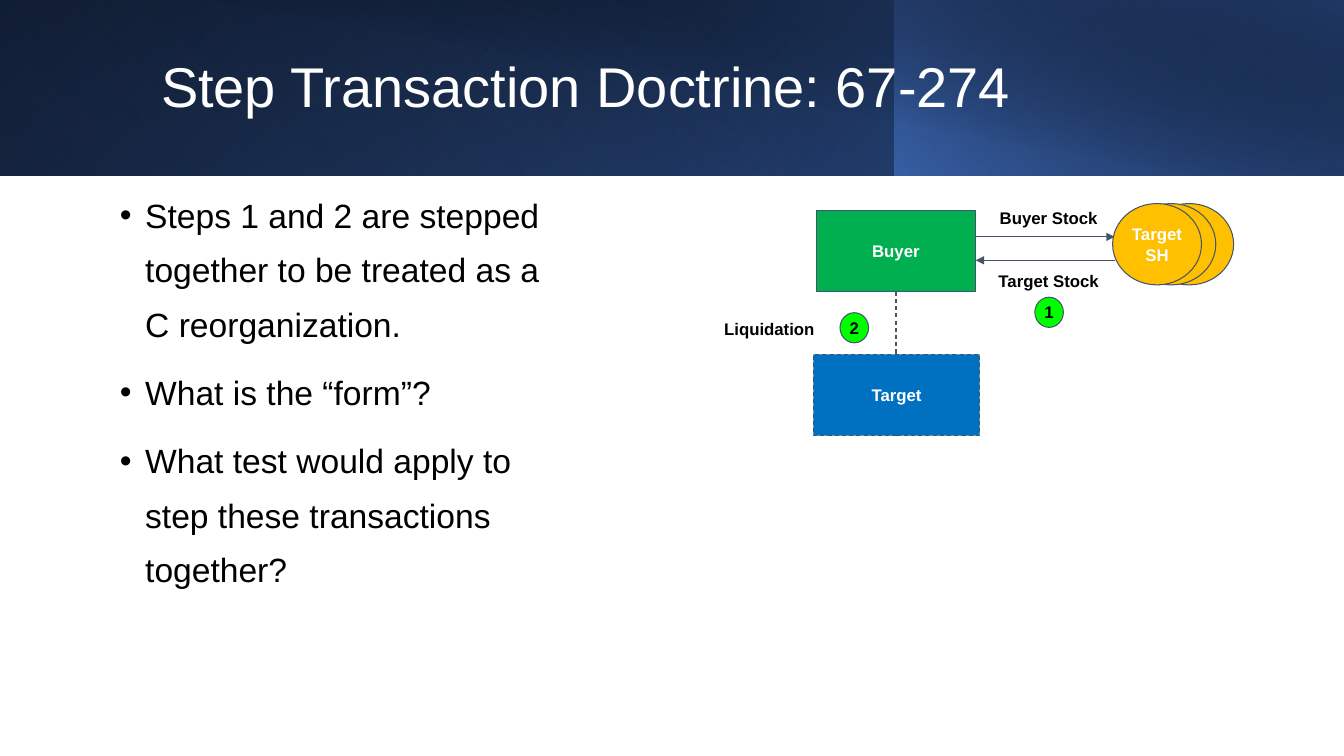
from dataclasses import dataclass

from lxml import etree
from pptx import Presentation
from pptx.dml.color import RGBColor
from pptx.enum.dml import MSO_LINE
from pptx.enum.shapes import MSO_CONNECTOR, MSO_SHAPE
from pptx.enum.text import MSO_ANCHOR, PP_ALIGN
from pptx.oxml import parse_xml
from pptx.oxml.ns import qn
from pptx.util import Cm, Pt

RECTANGLE = MSO_SHAPE.RECTANGLE
OVAL = MSO_SHAPE.OVAL
NODE = MSO_SHAPE.FLOWCHART_CONNECTOR
STRAIGHT = MSO_CONNECTOR.STRAIGHT
DASH = MSO_LINE.DASH
MIDDLE, TOP = MSO_ANCHOR.MIDDLE, MSO_ANCHOR.TOP
CENTER, LEFT = PP_ALIGN.CENTER, PP_ALIGN.LEFT
DRAWING = "http://schemas.openxmlformats.org/drawingml/2006/main"


@dataclass(frozen=True)
class Theme:
    font: str = "Arial"
    title_size: int = 40
    body_size: int = 24
    label_size: int = 12
    line_width: float = 0.75
    white: str = "FFFFFF"
    black: str = "000000"
    line: str = "44546A"
    buyer: str = "00B050"
    target: str = "0070C0"
    step: str = "00FF00"
    holder: str = "FFC000"
    royal: str = "2F5597"
    blue: str = "4472C4"
    navy: str = "203864"


@dataclass(frozen=True)
class Box:
    left: float
    top: float
    width: float
    height: float

    def inner(self, left, top, width, height):
        return Box(self.left + left, self.top + top, width, height)

    def lengths(self):
        return [Cm(value) for value in (self.left, self.top, self.width, self.height)]


THEME = Theme()


def set_all(target, values):
    for name, value in values.items():
        setattr(target, name, value)


def write(shape, lines, size, color, bold=False, align=CENTER, anchor=MIDDLE,
          margins=(0.25, 0.25), wrap=True, spacing=None):
    frame = shape.text_frame
    side, end = (Cm(margin) for margin in margins)
    set_all(frame, {"word_wrap": wrap, "vertical_anchor": anchor,
                    "margin_left": side, "margin_right": side,
                    "margin_top": end, "margin_bottom": end})
    for index, line in enumerate(lines):
        para = frame.add_paragraph() if index else frame.paragraphs[0]
        set_all(para, {"alignment": align, "line_spacing": spacing})
        span = para.add_run()
        span.text = line
        set_all(span.font, {"name": THEME.font, "size": Pt(size), "bold": bold})
        span.font.color.rgb = RGBColor.from_string(color)
    return frame


def add_gradient(page, box, stops, angle, flipped=False, rotation=0):
    shape = page.shapes.add_shape(RECTANGLE, *box.lengths())
    shape.shadow.inherit = False
    shape.line.fill.background()
    shape.rotation = rotation
    properties = shape._element.spPr
    if flipped:
        properties.find(qn("a:xfrm")).set("flipH", "1")
    marks = "".join(
        f'<a:gs pos="{place * 1000}"><a:srgbClr val="{color}">'
        f'<a:alpha val="{opacity * 1000}"/></a:srgbClr></a:gs>'
        for place, color, opacity in stops)
    properties.find(qn("a:prstGeom")).addnext(parse_xml(
        f'<a:gradFill xmlns:a="{DRAWING}" rotWithShape="1"><a:gsLst>{marks}</a:gsLst>'
        f'<a:lin ang="{angle * 60000}" scaled="0"/></a:gradFill>'))


def add_node(page, kind, box, fill, lines=(), color=THEME.white, dash=None, **text):
    shape = page.shapes.add_shape(kind, *box.lengths())
    shape.shadow.inherit = False
    shape.fill.solid()
    shape.fill.fore_color.rgb = RGBColor.from_string(fill)
    style_line(shape.line, dash)
    write(shape, lines, THEME.label_size, color, bold=True, **text)


def style_line(line, dash=None):
    line.color.rgb = RGBColor.from_string(THEME.line)
    set_all(line, {"width": Pt(THEME.line_width), "dash_style": dash})


def connect(page, box, start, finish, arrow=True, dash=None):
    points = [Cm(value) for x, y in (start, finish)
              for value in (box.left + x, box.top + y)]
    connector = page.shapes.add_connector(STRAIGHT, *points)
    style_line(connector.line, dash)
    properties = connector._element.spPr
    if arrow:
        etree.SubElement(properties.find(qn("a:ln")), qn("a:tailEnd"), type="triangle")
    etree.SubElement(properties, qn("a:effectLst"))


def draw_banner(page, box):
    split = 22.55
    add_gradient(page, box, [(0, THEME.black, 100), (100, THEME.royal, 100)], 140, True)
    add_gradient(page, box.inner(0, 0, split, box.height),
                 [(20, THEME.blue, 0), (100, THEME.navy, 55)], 230, True, 180)
    add_gradient(page, box.inner(split, 0, box.width - split, box.height),
                 [(0, THEME.blue, 66), (100, THEME.black, 30)], 220, True)
    add_gradient(page, box.inner(1.27, 0, box.width - 1.27, box.height),
                 [(50, THEME.black, 0), (99, THEME.navy, 52)], 280)


def draw_title(page, box, title):
    shape = page.shapes.add_textbox(*box.lengths())
    write(shape, [title], THEME.title_size, THEME.white, align=LEFT,
          margins=(0.25, 0.13), spacing=0.9)


def draw_bullets(page, box, points):
    shape = page.shapes.add_textbox(*box.lengths())
    frame = write(shape, points, THEME.body_size, THEME.black, align=LEFT,
                  anchor=TOP, margins=(0.25, 0.13), spacing=1.35)
    indent = Cm(0.64)
    for para in frame.paragraphs:
        para.space_before = Pt(10)
        properties = para._p.get_or_add_pPr()
        properties.set("marL", str(indent))
        properties.set("indent", str(-indent))
        etree.SubElement(properties, qn("a:buFont"), typeface=THEME.font)
        etree.SubElement(properties, qn("a:buChar"), char="•")


def draw_diagram(page, box):
    height = 2.05
    add_node(page, RECTANGLE, box.inner(3.02, 0.32, 4.02, height), THEME.buyer, ["Buyer"])
    add_node(page, RECTANGLE, box.inner(2.95, 3.95, 4.19, height), THEME.target,
             ["Target"], dash=DASH)
    connect(page, box, (7.04, 0.99), (10.54, 0.99))
    connect(page, box, (10.54, 1.58), (7.04, 1.58))
    connect(page, box, (5.03, 2.37), (5.03, 3.95), arrow=False, dash=DASH)
    for text, left, top in (("Buyer Stock", 7.04, 0), ("Target Stock", 7.04, 1.6),
                            ("Liquidation", 0, 2.79)):
        label = page.shapes.add_textbox(*box.inner(left, top, 3.68, 0.76).lengths())
        write(label, [text], THEME.label_size, THEME.black, bold=True, anchor=TOP)
    for step, left, top in (("1", 8.53, 2.51), ("2", 3.62, 2.9)):
        add_node(page, OVAL, box.inner(left, top, 0.72, 0.76), THEME.step, [step],
                 color=THEME.black, margins=(0, 0))
    for left, lines in ((11.3, []), (10.85, []), (10.49, ["Target", "SH"])):
        add_node(page, NODE, box.inner(left, 0.15, 2.24, height), THEME.holder,
                 lines, wrap=False)


def main():
    deck = Presentation()
    set_all(deck, {"slide_width": Cm(33.87), "slide_height": Cm(19.05)})
    page = deck.slides.add_slide(deck.slide_layouts[6])
    draw_banner(page, Box(0, 0, 33.87, 4.43))
    draw_title(page, Box(3.81, 0.81, 27.48, 2.87), "Step Transaction Doctrine: 67-274")
    draw_bullets(page, Box(2.77, 4.42, 11.76, 14.2), [
        "Steps 1 and 2 are stepped together to be treated as a C reorganization.",
        "What is the “form”?",
        "What test would apply to step these transactions together?",
    ])
    draw_diagram(page, Box(17.55, 4.98, 13.54, 6))
    deck.save("out.pptx")


if __name__ == "__main__":
    main()
